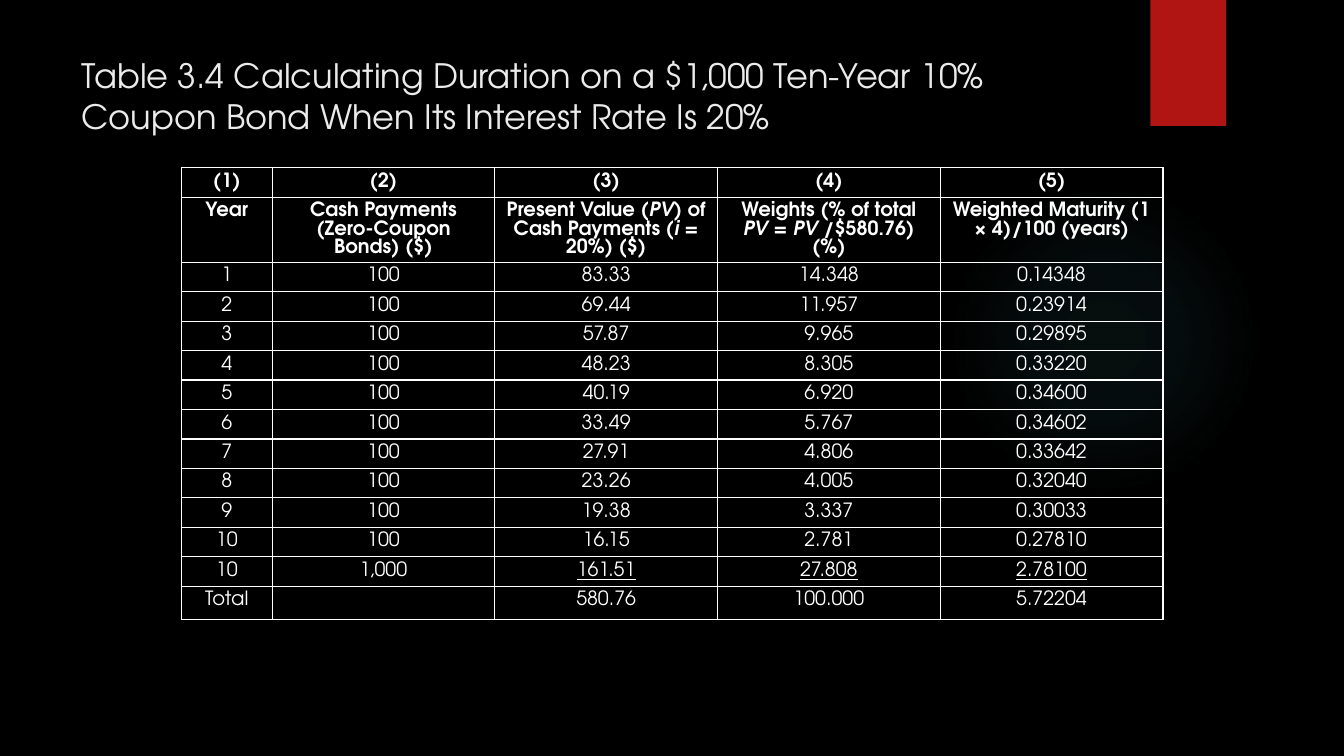
from lxml.etree import SubElement
from pptx import Presentation
from pptx.dml.color import RGBColor
from pptx.enum.shapes import MSO_SHAPE
from pptx.enum.text import PP_ALIGN
from pptx.oxml import parse_xml
from pptx.oxml.ns import nsdecls, qn
from pptx.util import Inches, Pt

BLACK = RGBColor(0x00, 0x00, 0x00)
WHITE = RGBColor(0xFF, 0xFF, 0xFF)
PALE = RGBColor(0xEB, 0xEB, 0xEB)
RED = RGBColor(0xB0, 0x15, 0x13)
TEAL = RGBColor(0x50, 0xB9, 0xC1)

TITLE = ("Table 3.4 Calculating Duration on a $1,000 Ten-Year 10% "
         "Coupon Bond When Its Interest Rate Is 20%")

# Underscores mark italic parts
HEADS = [
    ["(1)", "(2)", "(3)", "(4)", "(5)"],
    ["Year", "Cash Payments (Zero-Coupon Bonds) ($)",
     "Present Value (_PV_) of Cash Payments (_i_ = 20%) ($)",
     "Weights (% of total _PV_ = _PV_ /$580.76) (%)",
     "Weighted Maturity (1 × 4)/100 (years)"],
]
YEARS = [
    ["1", "100", "83.33", "14.348", "0.14348"],
    ["2", "100", "69.44", "11.957", "0.23914"],
    ["3", "100", "57.87", "9.965", "0.29895"],
    ["4", "100", "48.23", "8.305", "0.33220"],
    ["5", "100", "40.19", "6.920", "0.34600"],
    ["6", "100", "33.49", "5.767", "0.34602"],
    ["7", "100", "27.91", "4.806", "0.33642"],
    ["8", "100", "23.26", "4.005", "0.32040"],
    ["9", "100", "19.38", "3.337", "0.30033"],
    ["10", "100", "16.15", "2.781", "0.27810"],
    ["10", "1,000", "161.51", "27.808", "2.78100"],
]
TOTAL = ["Total", "", "580.76", "100.000", "5.72204"]


class Deck:
    """Style and current slide; lengths are percent of the slide's size."""
    face = "TeX Gyre Adventor"

    def __init__(self):
        self.show = Presentation()
        self.show.slide_width = Inches(13.33)
        self.show.slide_height = Inches(7.5)
        self.slide = self.show.slides.add_slide(self.show.slide_layouts[6])
        fill = self.slide.background.fill
        fill.solid()
        fill.fore_color.rgb = BLACK

    def wide(self, share):
        return round(self.show.slide_width * share / 100)

    def high(self, share):
        return round(self.show.slide_height * share / 100)

    def box(self, x, y, w, h):
        return self.wide(x), self.high(y), self.wide(w), self.high(h)

    def font(self, para, size, color, bold=False):
        font = para.font
        font.name, font.size, font.bold = self.face, Pt(size), bold
        font.color.rgb = color

    def shape(self, kind, color, *place):
        shape = self.slide.shapes.add_shape(kind, *self.box(*place))
        shape.shadow.inherit = False
        shape.line.fill.background()
        shape.fill.solid()
        shape.fill.fore_color.rgb = color
        return shape

    def glow(self, color, stops, *place):
        shape = self.shape(MSO_SHAPE.OVAL, color, *place)
        marks = "".join(
            f'<a:gs pos="{pos * 1000}"><a:srgbClr val="{color}">'
            f'<a:alpha val="{alpha * 1000}"/></a:srgbClr></a:gs>'
            for pos, alpha in stops)
        grad = parse_xml(
            f'<a:gradFill {nsdecls("a")}><a:gsLst>{marks}</a:gsLst>'
            '<a:path path="circle"><a:fillToRect l="50000" t="50000" '
            'r="50000" b="50000"/></a:path></a:gradFill>')
        props = shape.fill._xPr
        props.replace(props.find(qn("a:solidFill")), grad)

    def text(self, words, size, color, *place):
        frame = self.slide.shapes.add_textbox(*self.box(*place)).text_frame
        frame.word_wrap = True
        para = frame.paragraphs[0]
        para.text = words
        self.font(para, size, color)

    def edge(self, cell, color):
        props = cell._tc.get_or_add_tcPr()
        for spot, side in enumerate(("lnL", "lnR", "lnT", "lnB")):
            line = parse_xml(f'<a:{side} {nsdecls("a")} w="{Pt(1)}"/>')
            fill = SubElement(line, qn("a:solidFill"))
            SubElement(fill, qn("a:srgbClr")).set("val", str(color))
            props.insert(spot, line)

    def cell(self, cell, words, bold, under):
        cell.fill.background()
        self.edge(cell, WHITE)
        para = cell.text_frame.paragraphs[0]
        para.alignment = PP_ALIGN.CENTER
        para.line_spacing = Pt(13)
        self.font(para, 14, WHITE, bold)
        if not words:
            return
        for i, part in enumerate(words.split("_")):
            run = para.add_run()
            run.text = part
            if i % 2:
                run.font.italic = True
            if under:
                run.font.underline = True

    def table(self, rows, heads, x, y, cols, lines):
        place = self.box(x, y, sum(cols), sum(lines))
        table = self.slide.shapes.add_table(
            len(rows), len(cols), *place).table
        table.first_row = table.horz_banding = False
        for col, share in zip(table.columns, cols):
            col.width = self.wide(share)
        for r, (row, share) in enumerate(zip(rows, lines)):
            table.rows[r].height = self.high(share)
            for c, words in enumerate(row):
                # The last figures before the total are underlined
                under = r == len(rows) - 2 and c > 1
                self.cell(table.cell(r, c), words, r < heads, under)


def main():
    deck = Deck()
    # Backdrop
    deck.glow(TEAL, [(0, 7), (36, 6), (69, 0)], 70.59, 24.4, 23.1, 41.07)
    deck.shape(MSO_SHAPE.RECTANGLE, RED, 85.6, 0, 5.63, 16.67)
    # Title
    deck.text(TITLE, 24, PALE, 5.33, 6.67, 77.19, 20.4)
    # Duration table
    rows = HEADS + YEARS + [TOTAL]
    lines = [3.9, 8.6] + [3.9] * (len(rows) - 2)
    deck.table(rows, len(HEADS), 13.5, 22.2, [6.75] + [16.57] * 4, lines)
    deck.show.save("out.pptx")


if __name__ == "__main__":
    main()
